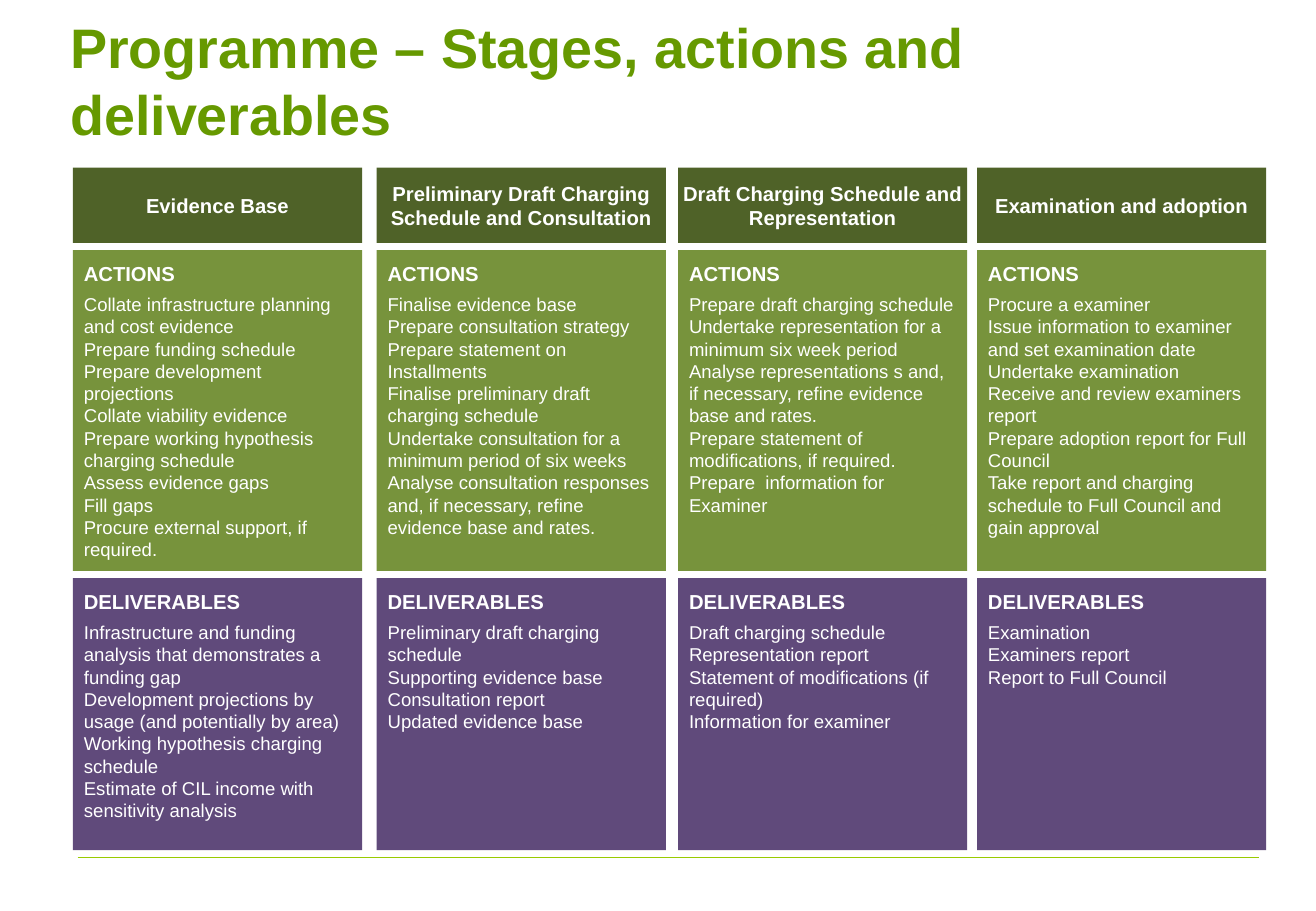
from pptx import Presentation, util as u
from pptx.dml.color import RGBColor
from pptx.enum import shapes, text
from pptx.oxml.ns import qn
from lxml import etree

WIDTH, HEIGHT = 10.83, 7.5
COLUMNS = (0.6, 3.1, 5.58, 8.04)
COLUMN_WIDTH = 2.38
GAP = 0.06
HEADER_TOP = 1.38
HEADER_HEIGHT, ACTIONS_HEIGHT, DELIVERABLES_HEIGHT = 0.62, 2.64, 2.24
ACTIONS_TOP = HEADER_TOP + HEADER_HEIGHT + GAP
DELIVERABLES_TOP = ACTIONS_TOP + ACTIONS_HEIGHT + GAP
RULE_Y = 7.06

WHITE = RGBColor(0xFF, 0xFF, 0xFF)
TITLE_GREEN = RGBColor(0x66, 0x99, 0x00)
HEADER_GREEN = RGBColor(0x4F, 0x62, 0x28)
ACTIONS_GREEN = RGBColor(0x77, 0x93, 0x3C)
DELIVERABLES_PURPLE = RGBColor(0x60, 0x4A, 0x7B)
RULE_LIME = RGBColor(0x99, 0xCC, 0x00)

TITLE = {"size": u.Pt(33), "bold": True, "color": TITLE_GREEN}
HEADING = {"size": u.Pt(12), "bold": True, "color": WHITE}
BODY = {"size": u.Pt(11), "bold": False, "color": WHITE}

# Each stage: name, actions, deliverables
STAGES = [
    ("Evidence Base",
     ["Collate infrastructure planning and cost evidence",
      "Prepare funding schedule",
      "Prepare development projections",
      "Collate viability evidence",
      "Prepare working hypothesis charging schedule",
      "Assess evidence gaps",
      "Fill gaps",
      "Procure external support, if required."],
     ["Infrastructure and funding analysis that demonstrates a funding gap",
      "Development projections by usage (and potentially by area)",
      "Working hypothesis charging schedule",
      "Estimate of CIL income with sensitivity analysis"]),
    ("Preliminary Draft Charging Schedule and Consultation",
     ["Finalise evidence base",
      "Prepare consultation strategy",
      "Prepare statement on",
      "Installments",
      "Finalise preliminary draft charging schedule",
      "Undertake consultation for a minimum period of six weeks",
      "Analyse consultation responses and, if necessary, refine evidence "
      "base and rates."],
     ["Preliminary draft charging schedule",
      "Supporting evidence base",
      "Consultation report",
      "Updated evidence base"]),
    ("Draft Charging Schedule and Representation",
     ["Prepare draft charging schedule",
      "Undertake representation for a minimum six week period",
      "Analyse representations s and, if necessary, refine evidence base "
      "and rates.",
      "Prepare statement of modifications, if required.",
      "Prepare  information for Examiner"],
     ["Draft charging schedule",
      "Representation report",
      "Statement of modifications (if required)",
      "Information for examiner"]),
    ("Examination and adoption",
     ["Procure a examiner",
      "Issue information to examiner and set examination date",
      "Undertake examination",
      "Receive and review examiners report",
      "Prepare adoption report for Full Council",
      "Take report and charging schedule to Full Council and gain approval"],
     ["Examination",
      "Examiners report",
      "Report to Full Council"]),
]


def set_frame(frame, margins, anchor):
    """Margins are left/right and top/bottom, in inches."""
    side, end = (u.Inches(margin) for margin in margins)
    settings = {"word_wrap": True, "vertical_anchor": anchor,
                "margin_left": side, "margin_right": side,
                "margin_top": end, "margin_bottom": end}
    for name, value in settings.items():
        setattr(frame, name, value)


def write(para, words, style, align=text.PP_ALIGN.LEFT):
    para.alignment = align
    span = para.add_run()
    span.text = words
    span.font.name = "Arial"
    for name, value in style.items():
        if name == "color":
            span.font.color.rgb = value
        else:
            setattr(span.font, name, value)


def add_panel(page, left, top, height, fill):
    box = page.shapes.add_shape(
        shapes.MSO_SHAPE.RECTANGLE, u.Inches(left), u.Inches(top),
        u.Inches(COLUMN_WIDTH), u.Inches(height))
    box.shadow.inherit = False
    box.fill.solid()
    box.fill.fore_color.rgb = fill
    box.line.fill.background()
    return box.text_frame


def add_header(page, left, name):
    frame = add_panel(page, left, HEADER_TOP, HEADER_HEIGHT, HEADER_GREEN)
    set_frame(frame, (0.03, 0), text.MSO_ANCHOR.MIDDLE)
    write(frame.paragraphs[0], name, HEADING, text.PP_ALIGN.CENTER)


def add_list(page, left, top, height, fill, heading, items):
    frame = add_panel(page, left, top, height, fill)
    set_frame(frame, (0.09, 0.09), text.MSO_ANCHOR.TOP)
    write(frame.paragraphs[0], heading, HEADING)
    frame.paragraphs[0].space_after = u.Pt(4.5)
    for item in items:
        write(frame.add_paragraph(), item, BODY)


def add_title(page, words):
    box = page.shapes.add_textbox(u.Inches(0.48), u.Inches(0.15),
                                  u.Inches(9.26), u.Inches(1.01))
    set_frame(box.text_frame, (0.1, 0.05), text.MSO_ANCHOR.MIDDLE)
    write(box.text_frame.paragraphs[0], words, TITLE)


def add_rule(page):
    rule = page.shapes.add_connector(
        shapes.MSO_CONNECTOR.STRAIGHT, u.Inches(0.64), u.Inches(RULE_Y),
        u.Inches(10.36), u.Inches(RULE_Y))
    rule.line.color.rgb = RULE_LIME
    rule.line.width = u.Pt(0.75)
    etree.SubElement(rule._element.spPr, qn("a:effectLst"))


def main():
    deck = Presentation()
    deck.slide_width, deck.slide_height = u.Inches(WIDTH), u.Inches(HEIGHT)
    page = deck.slides.add_slide(deck.slide_layouts[6])
    add_rule(page)
    for left, (name, actions, deliverables) in zip(COLUMNS, STAGES):
        add_header(page, left, name)
        add_list(page, left, ACTIONS_TOP, ACTIONS_HEIGHT, ACTIONS_GREEN,
                 "ACTIONS", actions)
        add_list(page, left, DELIVERABLES_TOP, DELIVERABLES_HEIGHT,
                 DELIVERABLES_PURPLE, "DELIVERABLES", deliverables)
    add_title(page, TITLE_TEXT)
    deck.save("out.pptx")


TITLE_TEXT = "Programme – Stages, actions and deliverables"

if __name__ == "__main__":
    main()
